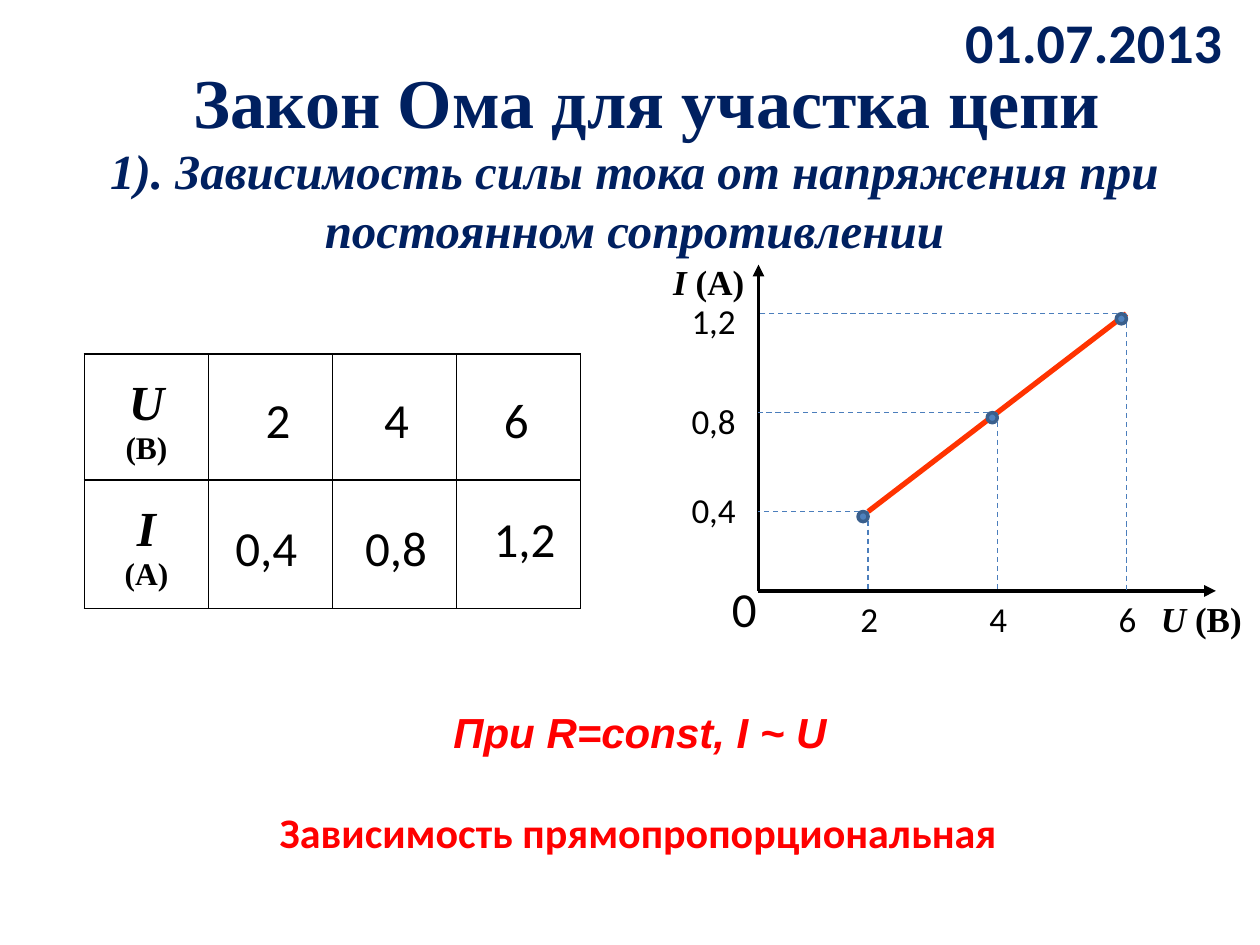
from dataclasses import dataclass

from pptx import Presentation
from pptx import util as u
from pptx.dml.color import RGBColor
from pptx.enum import dml, shapes, text
from pptx.oxml import parse_xml
from pptx.oxml.ns import nsdecls, qn

LEFT, CENTER, RIGHT = text.PP_ALIGN.LEFT, text.PP_ALIGN.CENTER, text.PP_ALIGN.RIGHT


@dataclass(frozen=True)
class Theme:
    ink: str = "000000"
    navy: str = "002060"
    red: str = "FF0000"
    graph: str = "FF3300"
    guide: str = "4B7EBC"
    dot: str = "4F81BD"
    dot_line: str = "3A5F8C"
    sans: str = "Calibri"
    serif: str = "Times New Roman"
    conclusion: str = "Arial"
    title: int = 40
    date: int = 32
    large: int = 28
    note: int = 24
    label: int = 20
    unit: int = 18


def rgb(value):
    return RGBColor.from_string(value)


def add_run(p, content, size, font, color, bold=False, italic=False, shadow=False):
    r = p.add_run()
    r.text = content
    f = r.font
    f.size, f.name, f.bold, f.italic = u.Pt(size), font, bold, italic
    f.color.rgb = rgb(color)
    if shadow:
        effect = parse_xml(
            f'<a:effectLst {nsdecls("a")}><a:outerShdw blurRad="127000" dist="260000" '
            'dir="2700000" algn="tl"><a:srgbClr val="000000"><a:alpha val="40000"/>'
            '</a:srgbClr></a:outerShdw></a:effectLst>')
        r.font.fill._xPr.find(qn("a:solidFill")).addnext(effect)


class SlideBuilder:
    def __init__(self, s, theme):
        self.s, self.theme = s, theme

    def fill_frame(self, tf, runs, align=LEFT, wrap=True, middle=False, **style):
        """Write one paragraph; runs is a string or (text, format) pairs."""
        tf.word_wrap = wrap
        tf.auto_size = text.MSO_AUTO_SIZE.NONE
        tf.vertical_anchor = text.MSO_ANCHOR.MIDDLE if middle else text.MSO_ANCHOR.TOP
        p = tf.paragraphs[0]
        p.alignment = align
        base = dict(size=self.theme.label, font=self.theme.sans, color=self.theme.ink) | style
        for content, extra in [(runs, {})] if isinstance(runs, str) else runs:
            add_run(p, content, **(base | extra))

    def title(self, content, box, **style):
        sp = self.s.shapes.title
        sp.left, sp.top, sp.width, sp.height = map(u.Inches, box)
        self.fill_frame(sp.text_frame, content, CENTER, middle=True, **style)

    def text(self, runs, box, **style):
        sp = self.s.shapes.add_textbox(*map(u.Inches, box))
        self.fill_frame(sp.text_frame, runs, **style)

    def line(self, start, end, color, width, dashed=False, arrow=False):
        c = self.s.shapes.add_connector(
            shapes.MSO_CONNECTOR.STRAIGHT, *map(u.Inches, (*start, *end)))
        c.line.color.rgb = rgb(color)
        c.line.width = u.Pt(width)
        if dashed:
            c.line.dash_style = dml.MSO_LINE.DASH
        if arrow:
            c.line._get_or_add_ln().append(
                parse_xml(f'<a:tailEnd {nsdecls("a")} type="triangle"/>'))
        c._element.spPr.append(parse_xml(f'<a:effectLst {nsdecls("a")}/>'))

    def dot(self, x, y, size=0.08):
        sp = self.s.shapes.add_shape(
            shapes.MSO_SHAPE.FLOWCHART_CONNECTOR, *map(u.Inches, (x, y, size, size)))
        sp.shadow.inherit = False
        sp.fill.solid()
        sp.fill.fore_color.rgb = rgb(self.theme.dot)
        sp.line.color.rgb = rgb(self.theme.dot_line)
        sp.line.width = u.Pt(2)

    def table(self, headers, box, columns, row_heights):
        """Draw a ruled grid with a symbol and its unit heading each row."""
        t = self.theme
        table = self.s.shapes.add_table(len(headers), columns, *map(u.Inches, box)).table
        table.first_row = table.horz_banding = False
        for column in table.columns:
            column.width = u.Inches(box[2] / columns)
        for row, height in zip(table.rows, row_heights):
            row.height = u.Inches(height)
        for cell in table.iter_cells():
            cell.fill.background()
            self.border(cell)
        for row, (symbol, unit) in enumerate(headers):
            cell = table.cell(row, 0)
            cell.margin_top = u.Inches(0.18)
            tf = cell.text_frame
            self.fill_frame(tf, symbol, CENTER, size=t.large, font=t.serif,
                            bold=True, italic=True)
            p = tf.add_paragraph()
            p.alignment = CENTER
            add_run(p, unit, t.unit, t.serif, t.ink, bold=True)

    def border(self, cell):
        tc_pr = cell._tc.get_or_add_tcPr()
        for i, side in enumerate(("lnL", "lnR", "lnT", "lnB")):
            tc_pr.insert(i, parse_xml(
                f'<a:{side} {nsdecls("a")} w="12700"><a:solidFill>'
                f'<a:srgbClr val="{self.theme.ink}"/></a:solidFill></a:{side}>'))


def draw_readings(b):
    t = b.theme
    b.table([("U", "(В)"), ("I", "(А)")], (0.67, 2.81, 3.94, 2.02), 4, (1, 1.02))
    for value, x in (("2", 2.01), ("4", 2.95), ("6", 3.9)):
        b.text(value, (x, 3.04, 0.4, 0.57), size=t.large, wrap=False)
    for value, x, y in (("0,4", 1.77, 4.06), ("0,8", 2.8, 4.06), ("1,2", 3.82, 3.99)):
        b.text(value, (x, y, 0.7, 0.57), size=t.large, wrap=False)


def draw_graph(b):
    t = b.theme
    x0, y0 = 6.02, 4.69
    points = [(6.89 + 1.025 * i, 4.06 - 0.785 * i) for i in range(3)]
    b.line((x0, y0), (x0, 2.1), t.ink, 2.25, arrow=True)
    b.line((x0, y0), (9.65, y0), t.ink, 2.25, arrow=True)
    b.line(points[0], points[-1], t.graph, 3)

    ticks = (("2", "0,4", 3.83), ("4", "0,8", 3.12), ("6", "1,2", 2.33))
    for (x, y), (voltage, current, label_y) in zip(points, ticks):
        b.line((x, y), (x, y0), t.guide, 0.75, dashed=True)
        b.line((x, y), (x0, y), t.guide, 0.75, dashed=True)
        b.text(voltage, (x - 0.16, y0, 0.34, 0.44), wrap=False)
        b.text(current, (5.39, label_y, 0.56, 0.44), wrap=False)
        b.dot(x - 0.08, y)

    b.text("0", (5.71, 4.54, 0.4, 0.57), size=t.large, wrap=False)
    for symbol, unit, box in (("U ", "(В)", (9.07, y0, 0.93, 0.44)),
                              ("I ", "(А)", (5.24, 2.02, 0.77, 0.44))):
        b.text([(symbol, dict(italic=True)), (unit, {})], box,
               align=CENTER, font=t.serif, bold=True)


def main():
    prs = Presentation()
    prs.slide_width, prs.slide_height = u.Inches(10), u.Inches(7.5)
    t = Theme()
    b = SlideBuilder(prs.slides.add_slide(prs.slide_layouts[5]), t)

    heading = dict(font=t.serif, color=t.navy, bold=True, shadow=True)
    b.title("Закон Ома для участка цепи", (0.51, 0.21, 9.25, 1.18), size=t.title, **heading)
    b.text("1). Зависимость силы тока от напряжения при постоянном сопротивлении",
           (0.35, 1.23, 9.37, 0.71), align=CENTER, middle=True, size=t.large,
           italic=True, **heading)
    b.text("01.07.2013", (7.2, 0.13, 2.6, 0.4), align=RIGHT, middle=True,
           size=t.date, color=t.navy, bold=True)

    draw_readings(b)
    draw_graph(b)

    result = dict(align=CENTER, size=t.note, color=t.red, bold=True)
    b.text("При R=const, I ~ U", (3.11, 5.56, 3.94, 0.51), font=t.conclusion,
           italic=True, **result)
    b.text("Зависимость прямопропорциональная", (2.09, 6.35, 5.95, 0.51),
           wrap=False, **result)
    prs.save("out.pptx")


if __name__ == "__main__":
    main()
